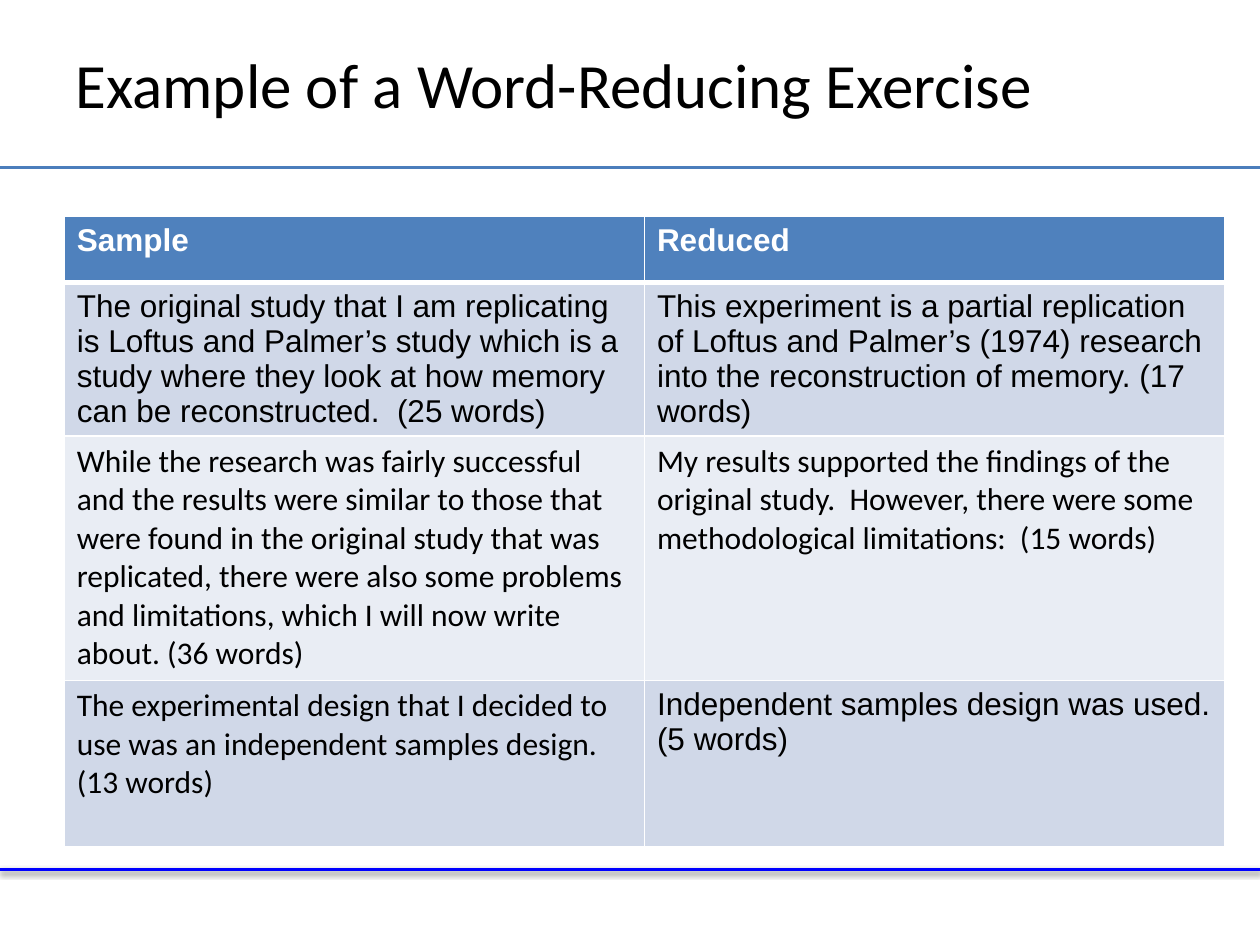
from typing import NamedTuple

from lxml import etree
from pptx import Presentation
from pptx import util as u
from pptx.dml.color import RGBColor
from pptx.enum import shapes, text
from pptx.oxml import ns

BLACK, WHITE = "000000", "FFFFFF"
SANS, BODY = "Arial", "Calibri"


class Rule(NamedTuple):
    y: float
    color: str
    width: float
    shadow: bool


class Cell(NamedTuple):
    words: str
    font: str


class Row(NamedTuple):
    height: float
    fill: str
    cells: tuple[Cell, Cell]


RULES = [Rule(6.9, "0000FF", 2, True), Rule(1.33, "4B7EBC", 1.75, False)]
ROWS = [
    Row(0.52, "4F81BD", (Cell("Sample", SANS), Cell("Reduced", SANS))),
    Row(1.22, "D0D8E8", (
        Cell("The original study that I am replicating is Loftus and Palmer’s "
             "study which is a study where they look at how memory can be "
             "reconstructed.  (25 words)", SANS),
        Cell("This experiment is a partial replication of Loftus and Palmer’s "
             "(1974) research into the reconstruction of memory. (17 words)", SANS))),
    Row(1.94, "E9EDF4", (
        Cell("While the research was fairly successful and the results were "
             "similar to those that were found in the original study that was "
             "replicated, there were also some problems and limitations, which "
             "I will now write about. (36 words)", BODY),
        Cell("My results supported the findings of the original study.  However, "
             "there were some methodological limitations:  (15 words)", BODY))),
    Row(1.32, "D0D8E8", (
        Cell("The experimental design that I decided to use was an independent "
             "samples design. (13 words)", BODY),
        Cell("Independent samples design was used. (5 words)", SANS))),
]


def rgb(code: str) -> RGBColor:
    return RGBColor.from_string(code)


def node(parent, tag: str, **attrs):
    return etree.SubElement(parent, ns.qn(tag), attrs)


def add_text(para, words: str, font: str, size: float, color: str, bold=False) -> None:
    run = para.add_run()
    run.text = words
    run.font.name, run.font.size, run.font.bold = font, u.Pt(size), bold
    run.font.color.rgb = rgb(color)


def draw_rule(slide, rule: Rule) -> None:
    y = u.Inches(rule.y)
    line = slide.shapes.add_connector(
        shapes.MSO_CONNECTOR.STRAIGHT, 0, y, u.Inches(10), y)
    line.line.color.rgb = rgb(rule.color)
    line.line.width = u.Pt(rule.width)
    effects = node(line._element.spPr, "a:effectLst")
    if rule.shadow:
        shade = node(effects, "a:outerShdw", blurRad=str(u.Pt(3.1)),
                     dist=str(u.Pt(1.6)), dir="5400000", rotWithShape="0")
        node(node(shade, "a:srgbClr", val=BLACK), "a:alpha", val="38000")


def set_edges(cell, top: float, base: float) -> None:
    props = cell._tc.get_or_add_tcPr()
    for side, width in (("L", 1), ("R", 1), ("T", top), ("B", base)):
        edge = node(props, f"a:ln{side}", w=str(u.Pt(width)))
        node(node(edge, "a:solidFill"), "a:srgbClr", val=WHITE)


def draw_table(slide, rows: list[Row]) -> None:
    high = sum(row.height for row in rows)
    table = slide.shapes.add_table(
        len(rows), 2, u.Inches(0.51), u.Inches(1.72),
        u.Inches(9.21), u.Inches(high)).table
    for col in table.columns:
        col.width = u.Inches(4.605)
    for r, row in enumerate(rows):
        table.rows[r].height = u.Inches(row.height)
        head = r == 0
        for c, item in enumerate(row.cells):
            cell = table.cell(r, c)
            set_edges(cell, 3 if r == 1 else 1, 3 if head else 1)
            cell.fill.solid()
            cell.fill.fore_color.rgb = rgb(row.fill)
            add_text(cell.text_frame.paragraphs[0], item.words, item.font, 18,
                     WHITE if head else BLACK, head)


def draw_title(slide, words: str) -> None:
    title = slide.shapes.title
    title.left, title.top = u.Inches(0.5), u.Inches(0.08)
    title.width, title.height = u.Inches(9), u.Inches(1.17)
    frame = title.text_frame
    frame.vertical_anchor = text.MSO_ANCHOR.MIDDLE
    para = frame.paragraphs[0]
    para.alignment = text.PP_ALIGN.LEFT
    add_text(para, words, BODY, 36, BLACK)


def main() -> None:
    deck = Presentation()
    deck.slide_width, deck.slide_height = u.Inches(10), u.Inches(7.5)
    slide = deck.slides.add_slide(deck.slide_layouts[5])

    # Rules above and below the table
    for rule in RULES:
        draw_rule(slide, rule)

    # Title and comparison table
    draw_title(slide, "Example of a Word-Reducing Exercise")
    draw_table(slide, ROWS)
    deck.save("out.pptx")


if __name__ == "__main__":
    main()
